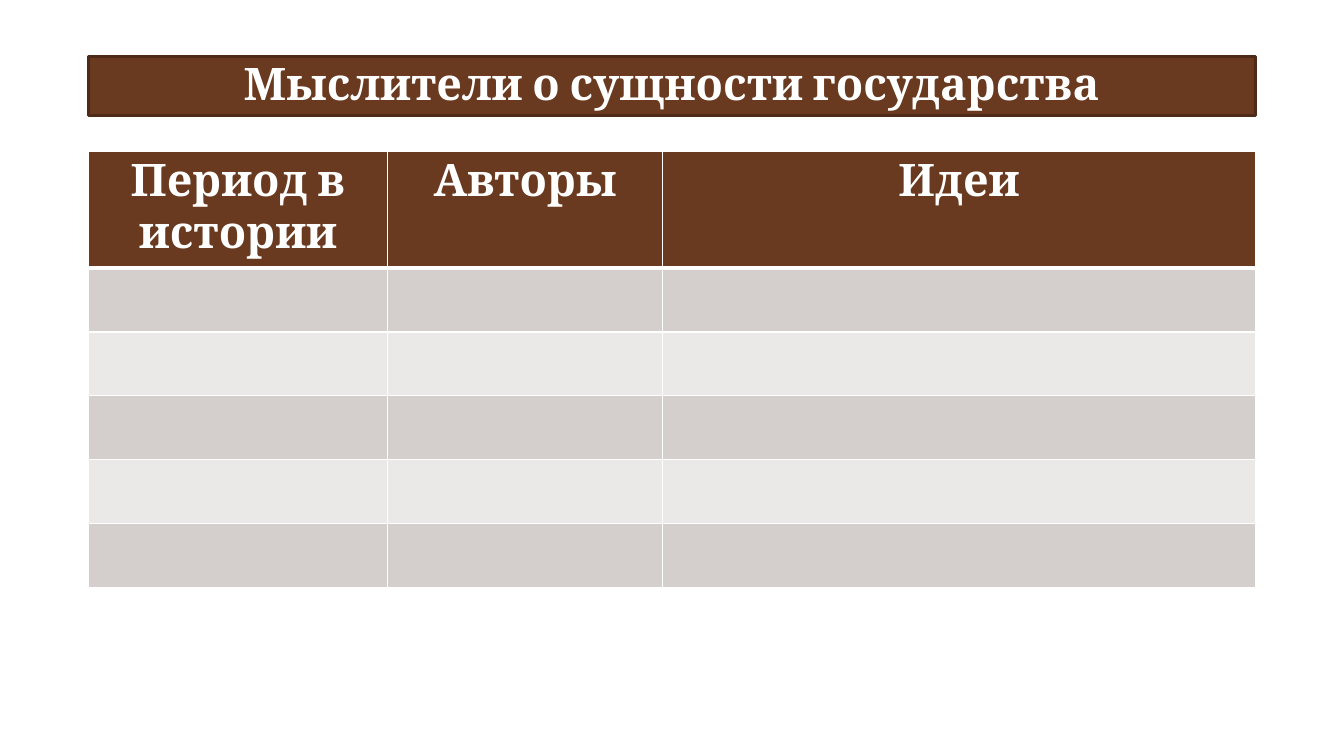
from lxml.etree import SubElement
from pptx import Presentation
from pptx.dml.color import RGBColor
from pptx.enum.shapes import MSO_SHAPE
from pptx.enum.text import MSO_ANCHOR, MSO_AUTO_SIZE, PP_ALIGN
from pptx.oxml.ns import qn
from pptx.util import Inches, Pt

COLORS = {
    "brown": "6A3A20",
    "dark_brown": "4E2B18",
    "band_dark": "D4CECD",
    "band_light": "EBE8E8",
    "white": "FFFFFF",
}
TITLE = "Мыслители о сущности государства"
HEADINGS = ["Период в истории", "Авторы", "Идеи"]
COLUMN_WIDTHS = [2.96, 2.73, 5.87]
BODY_ROWS = 5
HEADER_HEIGHT = 1.16


def color(name):
    return RGBColor.from_string(COLORS[name])


def set_heading(text_frame, text):
    """Write one centred line in the bold white heading style."""
    text_frame.text = text
    paragraph = text_frame.paragraphs[0]
    paragraph.alignment = PP_ALIGN.CENTER
    font = paragraph.runs[0].font
    font.name = "Cambria"
    font.size = Pt(32)
    font.bold = True
    font.color.rgb = color("white")
    return paragraph


def style_cell(cell, fill_name, widths):
    """Draw white borders, given in points by side, and fill the cell."""
    properties = cell._tc.get_or_add_tcPr()
    for side, width in widths.items():
        line = SubElement(properties, qn(f"a:ln{side}"), w=str(Pt(width)))
        solid = SubElement(line, qn("a:solidFill"))
        SubElement(solid, qn("a:srgbClr"), val=COLORS["white"])
    cell.fill.solid()
    cell.fill.fore_color.rgb = color(fill_name)


def add_title(slide, left, top, width, height):
    shape = slide.shapes.add_shape(
        MSO_SHAPE.RECTANGLE, Inches(left), Inches(top), Inches(width), Inches(height))
    shape.shadow.inherit = False
    shape.fill.solid()
    shape.fill.fore_color.rgb = color("brown")
    shape.line.color.rgb = color("dark_brown")
    shape.line.width = Pt(2.25)
    text_frame = shape.text_frame
    text_frame.word_wrap = True
    text_frame.auto_size = MSO_AUTO_SIZE.SHAPE_TO_FIT_TEXT
    text_frame.vertical_anchor = MSO_ANCHOR.MIDDLE
    set_heading(text_frame, TITLE).line_spacing = 0.9


def add_thinkers_table(slide, left, top, width, height):
    table = slide.shapes.add_table(
        BODY_ROWS + 1, len(HEADINGS),
        Inches(left), Inches(top), Inches(width), Inches(height)).table
    for column, share in zip(table.columns, COLUMN_WIDTHS):
        column.width = Inches(width * share / sum(COLUMN_WIDTHS))
    body_height = (height - HEADER_HEIGHT) / BODY_ROWS
    for index, row in enumerate(table.rows):
        row.height = Inches(body_height if index else HEADER_HEIGHT)
        fill_name = ("band_dark" if index % 2 else "band_light") if index else "brown"
        widths = {"L": 1, "R": 1, "T": 3 if index == 1 else 1, "B": 1 if index else 3}
        for cell in row.cells:
            style_cell(cell, fill_name, widths)
    for cell, heading in zip(table.rows[0].cells, HEADINGS):
        set_heading(cell.text_frame, heading)


def main():
    presentation = Presentation()
    presentation.slide_width = Inches(13.33)
    presentation.slide_height = Inches(7.5)
    slide = presentation.slides.add_slide(presentation.slide_layouts[6])
    add_thinkers_table(slide, 0.88, 1.5, 11.57, 4.33)
    add_title(slide, 0.88, 0.56, 11.57, 0.59)
    presentation.save("out.pptx")


if __name__ == "__main__":
    main()
